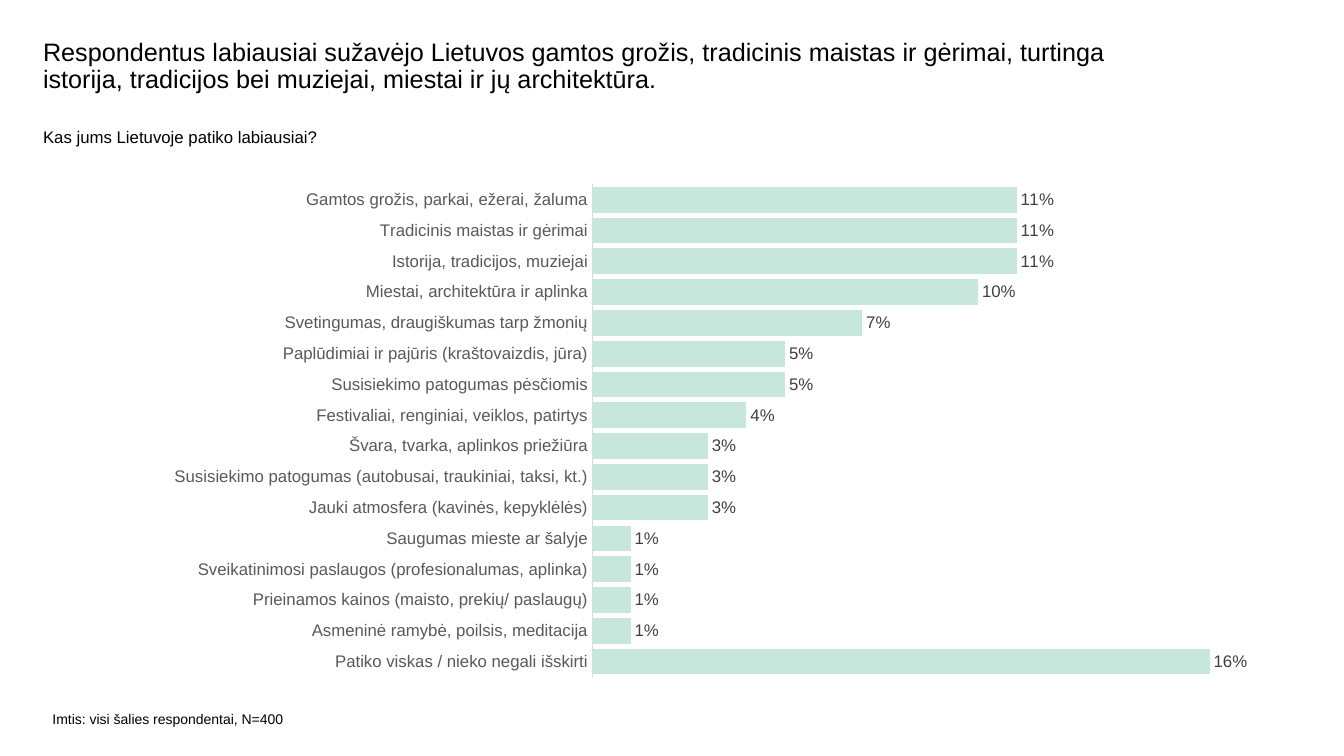
from lxml.etree import SubElement
from pptx import Presentation
from pptx.chart.data import CategoryChartData
from pptx.dml.color import RGBColor
from pptx.enum.chart import XL_CHART_TYPE, XL_LABEL_POSITION, XL_TICK_MARK
from pptx.enum.text import MSO_ANCHOR, MSO_AUTO_SIZE, PP_ALIGN
from pptx.oxml.ns import qn
from pptx.util import Emu, Pt

EMU_PER_PX = 9525
FONT = "Arial"
BLACK = "000000"
LABEL_GREY = "595959"
VALUE_GREY = "404040"
AXIS_GREY = "D9D9D9"
MINT = "C7E6DC"

ANSWERS = [
    ("Patiko viskas / nieko negali išskirti", 0.16),
    ("Asmeninė ramybė, poilsis, meditacija", 0.01),
    ("Prieinamos kainos (maisto, prekių/ paslaugų)", 0.01),
    ("Sveikatinimosi paslaugos (profesionalumas, aplinka)", 0.01),
    ("Saugumas mieste ar šalyje", 0.01),
    ("Jauki atmosfera (kavinės, kepyklėlės)", 0.03),
    ("Susisiekimo patogumas (autobusai, traukiniai, taksi, kt.)", 0.03),
    ("Švara, tvarka, aplinkos priežiūra", 0.03),
    ("Festivaliai, renginiai, veiklos, patirtys", 0.04),
    ("Susisiekimo patogumas pėsčiomis", 0.05),
    ("Paplūdimiai ir pajūris (kraštovaizdis, jūra)", 0.05),
    ("Svetingumas, draugiškumas tarp žmonių", 0.07),
    ("Miestai, architektūra ir aplinka", 0.10),
    ("Istorija, tradicijos, muziejai", 0.11),
    ("Tradicinis maistas ir gėrimai", 0.11),
    ("Gamtos grožis, parkai, ežerai, žaluma", 0.11),
]


def px(length):
    return Emu(length * EMU_PER_PX)


def color(hex_value):
    return RGBColor.from_string(hex_value)


def style_font(font, size, hex_value):
    font.name = FONT
    font.size = Pt(size)
    font.bold = False
    font.color.rgb = color(hex_value)


def write_text(frame, text, size):
    frame.word_wrap = True
    frame.auto_size = MSO_AUTO_SIZE.NONE
    frame.vertical_anchor = MSO_ANCHOR.TOP
    frame.margin_left = frame.margin_right = 0
    frame.margin_top = frame.margin_bottom = 0
    paragraph = frame.paragraphs[0]
    paragraph.alignment = PP_ALIGN.LEFT
    run = paragraph.add_run()
    run.text = text
    style_font(run.font, size, BLACK)
    return paragraph


def set_headline(slide, text):
    headline = slide.shapes.title
    headline.left, headline.top = px(41), px(38)
    headline.width, headline.height = px(1080), px(58)
    paragraph = write_text(headline.text_frame, text, 18)
    paragraph.line_spacing = 0.9


def add_caption(slide, box, text, size):
    caption = slide.shapes.add_textbox(*map(px, box))
    write_text(caption.text_frame, text, size)


def place_plot(chart, x, y, w, h):
    plot_area = chart._chartSpace.chart.plotArea
    layout = plot_area.find(qn("c:layout"))
    if layout is None:
        layout = SubElement(plot_area, qn("c:layout"))
        plot_area.insert(0, layout)
    manual = SubElement(layout, qn("c:manualLayout"))
    settings = [("layoutTarget", "inner"), ("xMode", "edge"), ("yMode", "edge"),
                ("x", x), ("y", y), ("w", w), ("h", h)]
    for tag, value in settings:
        SubElement(manual, qn(f"c:{tag}")).set("val", str(value))


def style_axes(chart):
    answers_axis = chart.category_axis
    answers_axis.major_tick_mark = XL_TICK_MARK.NONE
    answers_axis.minor_tick_mark = XL_TICK_MARK.NONE
    answers_axis.has_major_gridlines = False
    answers_axis.format.line.color.rgb = color(AXIS_GREY)
    answers_axis.format.line.width = Pt(0.75)
    style_font(answers_axis.tick_labels.font, 12, LABEL_GREY)

    share_axis = chart.value_axis
    share_axis.minimum_scale = 0
    share_axis.maximum_scale = 0.18
    share_axis.has_major_gridlines = False
    share_axis.tick_labels.number_format = "0%"
    share_axis.tick_labels.number_format_is_linked = False
    share_axis.visible = False


def style_bars(plot):
    plot.gap_width = 20
    plot.vary_by_categories = False
    bars = plot.series[0]
    bars.invert_if_negative = False
    bars.format.fill.solid()
    bars.format.fill.fore_color.rgb = color(MINT)
    bars.format.line.fill.background()
    labels = bars.data_labels
    labels.show_value = True
    labels.position = XL_LABEL_POSITION.OUTSIDE_END
    labels.number_format = "0%"
    labels.number_format_is_linked = False
    style_font(labels.font, 12, VALUE_GREY)


def add_answer_chart(slide, box):
    data = CategoryChartData(number_format="0%")
    data.categories = [answer for answer, _ in ANSWERS]
    data.add_series("Series 1", [share for _, share in ANSWERS])
    chart = slide.shapes.add_chart(
        XL_CHART_TYPE.BAR_CLUSTERED, *map(px, box), data).chart
    chart.has_title = False
    chart.has_legend = False
    style_font(chart.font, 10, BLACK)
    style_axes(chart)
    style_bars(chart.plots[0])
    place_plot(chart, 0.358, 0.033, 0.546, 0.935)


def main():
    deck = Presentation()
    deck.slide_width, deck.slide_height = px(1280), px(720)
    slide = deck.slides.add_slide(deck.slide_layouts.get_by_name("Title Only"))
    set_headline(
        slide,
        "Respondentus labiausiai sužavėjo Lietuvos gamtos grožis, "
        "tradicinis maistas ir gėrimai, turtinga istorija, tradicijos "
        "bei muziejai, miestai ir jų architektūra.")
    add_caption(slide, (41, 121, 1141, 59),
                "Kas jums Lietuvoje patiko labiausiai?", 12)
    add_caption(slide, (50, 677, 371, 27),
                "Imtis: visi šalies respondentai, N=400", 10)
    add_answer_chart(slide, (130, 159, 1212, 502))
    deck.save("out.pptx")


if __name__ == "__main__":
    main()
